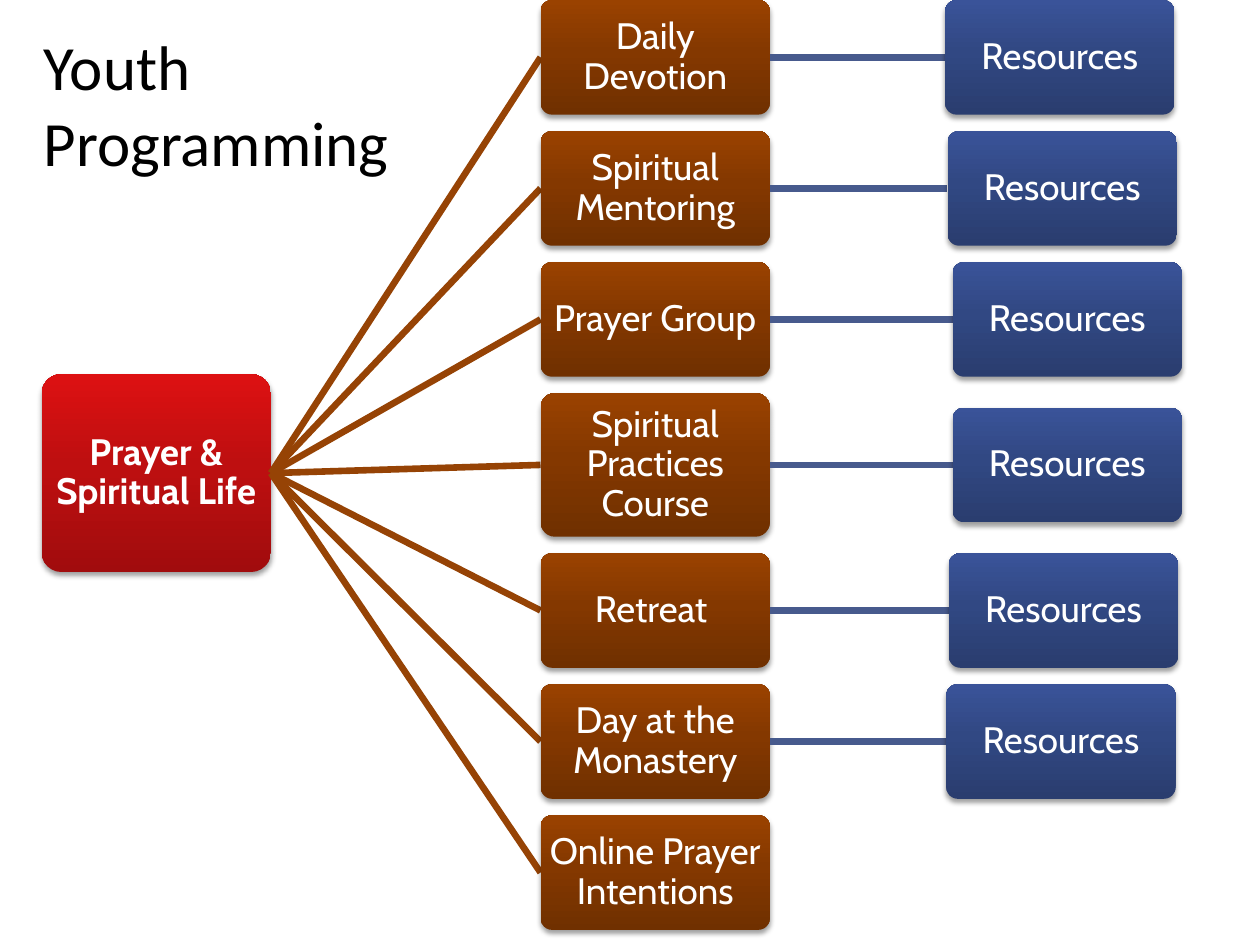
from dataclasses import dataclass

from lxml import etree
from pptx import Presentation
from pptx.dml.color import RGBColor
from pptx.enum import shapes, text
from pptx.oxml import parse_xml
from pptx.oxml.ns import nsdecls, qn
from pptx.util import Inches, Pt


@dataclass(frozen=True)
class Theme:
    # Gradients run from the bottom of a box to its top
    red: tuple = ("A10C0D", "BE0F10", "DD1112")
    brown: tuple = ("703000", "843800", "9A4200")
    blue: tuple = ("2A3D6F", "314883", "3A5399")
    branch: str = "964305"
    link: str = "475A8D"
    box_text: str = "FFFFFF"
    title_text: str = "000000"
    box_font: str = "Cabin"
    title_font: str = "Calibri"
    box_size: float = 21
    title_size: float = 36
    line_width: float = 3.78


theme = Theme()

SHADOW = f"""<a:effectLst {nsdecls("a")}>
  <a:outerShdw blurRad="{Pt(3.1)}" dist="{Pt(2)}" dir="5400000" rotWithShape="0">
    <a:srgbClr val="000000"><a:alpha val="38000"/></a:srgbClr>
  </a:outerShdw>
</a:effectLst>"""


def add_box(label, left, top, width, height, colors, bold=False):
    sp = s.shapes.add_shape(shapes.MSO_SHAPE.ROUNDED_RECTANGLE, Inches(left),
                            Inches(top), Inches(width), Inches(height))
    sp.adjustments[0] = 0.1
    sp.line.fill.background()
    stops = "".join(f'<a:gs pos="{pos}"><a:srgbClr val="{color}"/></a:gs>'
                    for pos, color in zip((0, 55000, 100000), colors))
    gradient = parse_xml(f'<a:gradFill {nsdecls("a")} rotWithShape="1"><a:gsLst>{stops}'
                         '</a:gsLst><a:lin ang="16200000" scaled="0"/></a:gradFill>')
    props = sp._element.spPr
    props.find(qn("a:prstGeom")).addnext(gradient)
    props.append(parse_xml(SHADOW))

    tf = sp.text_frame
    tf.text = label
    tf.word_wrap = True
    tf.vertical_anchor = text.MSO_ANCHOR.MIDDLE
    tf.margin_left = tf.margin_right = tf.margin_top = tf.margin_bottom = Inches(0.04)
    p = tf.paragraphs[0]
    p.alignment = text.PP_ALIGN.CENTER
    p.line_spacing = 0.9
    r = p.runs[0]
    r.font.name = theme.box_font
    r.font.size = Pt(theme.box_size)
    r.font.bold = bold
    r.font.color.rgb = RGBColor.from_string(theme.box_text)


def add_line(x1, y1, x2, y2, color):
    line = s.shapes.add_connector(shapes.MSO_CONNECTOR.STRAIGHT, Inches(x1),
                                  Inches(y1), Inches(x2), Inches(y2))
    line.line.color.rgb = RGBColor.from_string(color)
    line.line.width = Pt(theme.line_width)
    etree.SubElement(line._element.spPr, qn("a:effectLst"))


prs = Presentation()
prs.slide_width, prs.slide_height = Inches(10), Inches(7.5)
s = prs.slides.add_slide(prs.slide_layouts[6])

# Root box
BOX_W, BOX_H = 1.82, 0.91
ROOT_LEFT, ROOT_TOP, ROOT_H = 0.33, 2.97, 1.57
add_box("Prayer & Spiritual Life ", ROOT_LEFT, ROOT_TOP, BOX_W, ROOT_H,
        theme.red, bold=True)
root_right, root_mid = ROOT_LEFT + BOX_W, ROOT_TOP + ROOT_H / 2

# Programs: label, box height, left edge of the resources box
programs = [
    ("Daily Devotion", BOX_H, 7.5),
    ("Spiritual Mentoring", BOX_H, 7.52),
    ("Prayer Group", BOX_H, 7.56),
    ("Spiritual Practices Course", 1.14, 7.56),
    ("Retreat ", BOX_H, 7.53),
    ("Day at the Monastery", BOX_H, 7.51),
    ("Online Prayer Intentions", BOX_H, None),
]
PROGRAM_LEFT = 4.29
ROW_GAP = 0.13
program_right = PROGRAM_LEFT + BOX_W

top = 0
for label, height, resource_left in programs:
    mid = top + height / 2
    add_line(root_right, root_mid, PROGRAM_LEFT, mid, theme.branch)
    add_box(label, PROGRAM_LEFT, top, BOX_W, height, theme.brown)
    if resource_left:
        add_line(program_right, mid, resource_left, mid, theme.link)
        add_box("Resources", resource_left, mid - BOX_H / 2, BOX_W, BOX_H, theme.blue)
    top += height + ROW_GAP

# Title
title = s.shapes.add_textbox(Inches(0.25), Inches(0.17), Inches(3.43), Inches(1.31))
tf = title.text_frame
tf.text = "Youth\nProgramming"
tf.word_wrap = True
tf.auto_size = text.MSO_AUTO_SIZE.SHAPE_TO_FIT_TEXT
for p in tf.paragraphs:
    r = p.runs[0]
    r.font.name = theme.title_font
    r.font.size = Pt(theme.title_size)
    r.font.color.rgb = RGBColor.from_string(theme.title_text)

prs.save("out.pptx")
